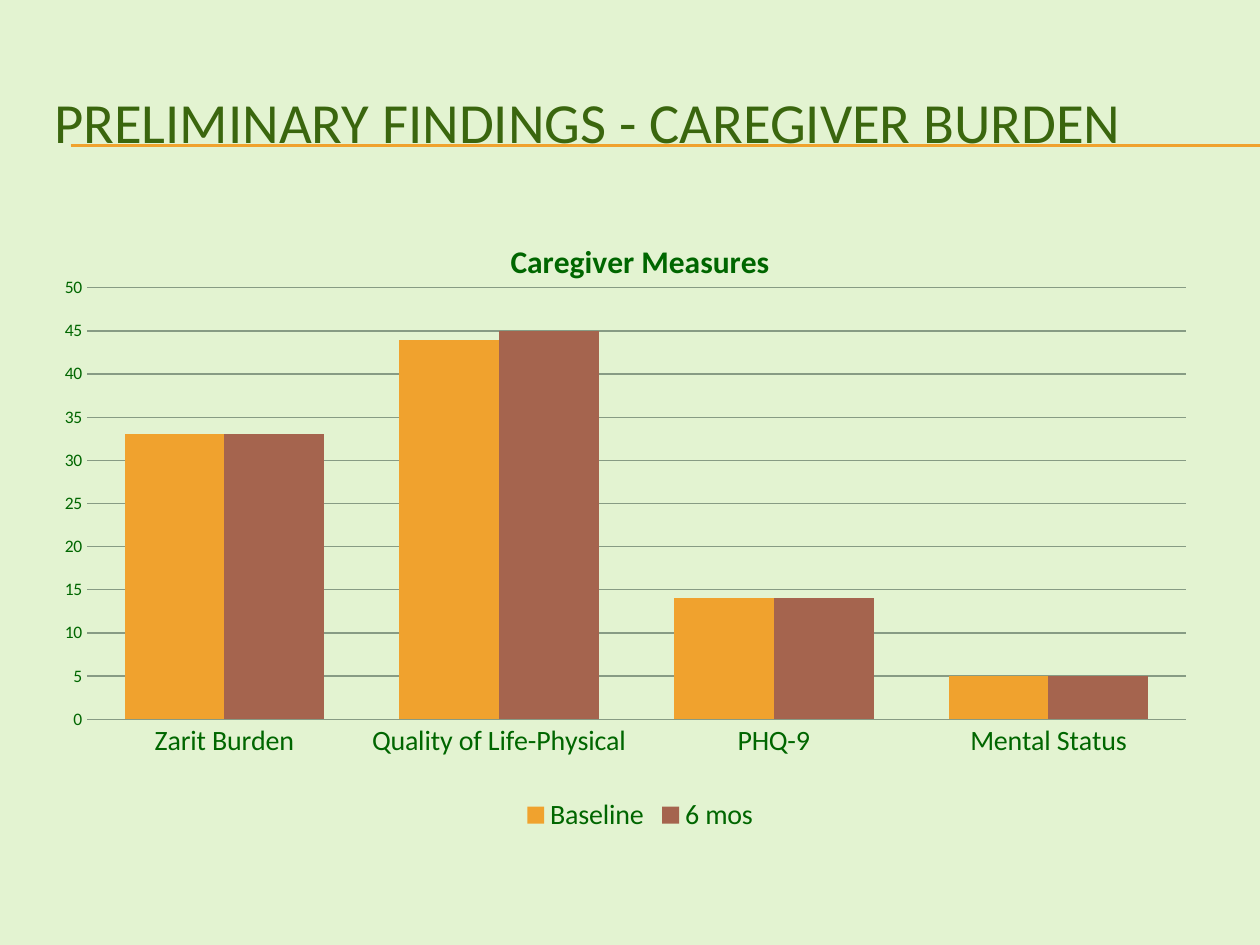
from dataclasses import dataclass

from lxml import etree
from pptx import Presentation
from pptx.chart.data import CategoryChartData
from pptx.dml.color import RGBColor
from pptx.enum.chart import XL_CHART_TYPE, XL_LEGEND_POSITION, XL_TICK_MARK
from pptx.enum.shapes import MSO_CONNECTOR
from pptx.enum.text import MSO_ANCHOR, PP_ALIGN
from pptx.oxml import parse_xml
from pptx.oxml.ns import nsdecls, qn
from pptx.util import Inches, Pt

COLUMNS = XL_CHART_TYPE.COLUMN_CLUSTERED
LEGEND_BOTTOM = XL_LEGEND_POSITION.BOTTOM
NO_TICK = XL_TICK_MARK.NONE
STRAIGHT = MSO_CONNECTOR.STRAIGHT
MIDDLE = MSO_ANCHOR.MIDDLE
LEFT = PP_ALIGN.LEFT

FONT = "Calibri"
COLORS = {
    "background": "E3F3D1",
    "title": "3A660E",
    "chart_text": "006600",
    "grid": "879B84",
    "rule": "F0A22E",
    "baseline": "F0A22E",
    "six_months": "A5644E",
}
WIDTH, HEIGHT = 10, 7.5
MARGIN, CONTENT_WIDTH = 0.33, 9.5
RULE_START = 0.56
RULE_HEIGHTS = (1.15, 1.16)
PLOT_SHARES = {"x": 0.038, "y": 0.118, "w": 0.918, "h": 0.692}


@dataclass
class Visit:
    name: str
    scores: tuple
    color: str


MEASURES = ("Zarit Burden", "Quality of Life-Physical", "PHQ-9", "Mental Status")
VISITS = (
    Visit("Baseline", (33, 44, 14, 5), "baseline"),
    Visit("6 mos", (33, 45, 14, 5), "six_months"),
)


def color(name: str) -> RGBColor:
    return RGBColor.from_string(COLORS[name])


def style_font(font, size: float, color_name: str, bold: bool = False) -> None:
    font.name = FONT
    font.size = Pt(size)
    font.bold = bold
    font.color.rgb = color(color_name)


def add_rule(slide, top: float) -> None:
    rule = slide.shapes.add_connector(
        STRAIGHT, Inches(RULE_START), Inches(top), Inches(WIDTH), Inches(top))
    rule.line.color.rgb = color("rule")
    rule.line.width = Pt(0.75)
    etree.SubElement(rule._element.spPr, qn("a:effectLst"))


def set_title(slide, text: str) -> None:
    title = slide.shapes.title
    title.left, title.top = Inches(MARGIN), Inches(0.5)
    title.width, title.height = Inches(CONTENT_WIDTH), Inches(0.92)
    frame = title.text_frame
    frame.text = text
    frame.word_wrap = True
    frame.vertical_anchor = MIDDLE
    heading = frame.paragraphs[0]
    heading.alignment = LEFT
    style_font(heading.runs[0].font, 32.4, "title")
    # The title stands in front of the rules
    title._element.getparent().append(title._element)


def fix_plot_area(chart) -> None:
    """Place the inner plot area by shares of the chart's size."""
    shares = "".join(f'<c:{side} val="{share}"/>' for side, share in PLOT_SHARES.items())
    layout = parse_xml(
        f'<c:layout {nsdecls("c")}><c:manualLayout><c:layoutTarget val="inner"/>'
        f'<c:xMode val="edge"/><c:yMode val="edge"/>{shares}'
        "</c:manualLayout></c:layout>")
    plot_area = chart._chartSpace.chart.plotArea
    for automatic in plot_area.findall(qn("c:layout")):
        plot_area.remove(automatic)
    plot_area.insert(0, layout)


def style_axes(chart) -> None:
    measures, scores = chart.category_axis, chart.value_axis
    for axis, size in ((measures, 16), (scores, 10)):
        axis.major_tick_mark = NO_TICK
        axis.minor_tick_mark = NO_TICK
        style_font(axis.tick_labels.font, size, "chart_text")
    scores.minimum_scale, scores.maximum_scale, scores.major_unit = 0, 50, 5
    scores.has_major_gridlines = True
    scores.format.line.fill.background()
    for line in (measures.format.line, scores.major_gridlines.format.line):
        line.color.rgb = color("grid")
        line.width = Pt(0.75)


def add_measures_chart(slide) -> None:
    data = CategoryChartData()
    data.categories = MEASURES
    for visit in VISITS:
        data.add_series(visit.name, visit.scores)
    chart = slide.shapes.add_chart(
        COLUMNS, Inches(MARGIN), Inches(1.7),
        Inches(CONTENT_WIDTH), Inches(4.95), data).chart
    style_font(chart.font, 10, "chart_text")

    chart.has_title = True
    chart.chart_title.include_in_layout = False
    heading = chart.chart_title.text_frame
    heading.text = "Caregiver Measures"
    style_font(heading.paragraphs[0].runs[0].font, 18, "chart_text", bold=True)

    chart.has_legend = True
    chart.legend.position = LEGEND_BOTTOM
    chart.legend.include_in_layout = False
    style_font(chart.legend.font, 16, "chart_text")

    plot = chart.plots[0]
    plot.gap_width = 75
    plot.overlap = 0
    plot.vary_by_categories = False
    for series, visit in zip(plot.series, VISITS):
        series.format.fill.solid()
        series.format.fill.fore_color.rgb = color(visit.color)
    style_axes(chart)
    fix_plot_area(chart)


def main() -> None:
    deck = Presentation()
    deck.slide_width, deck.slide_height = Inches(WIDTH), Inches(HEIGHT)
    slide = deck.slides.add_slide(deck.slide_layouts.get_by_name("Title Only"))
    slide.background.fill.solid()
    slide.background.fill.fore_color.rgb = color("background")
    for top in RULE_HEIGHTS:
        add_rule(slide, top)
    set_title(slide, "PRELIMINARY FINDINGS - CAREGIVER BURDEN")
    add_measures_chart(slide)
    deck.save("out.pptx")


if __name__ == "__main__":
    main()
